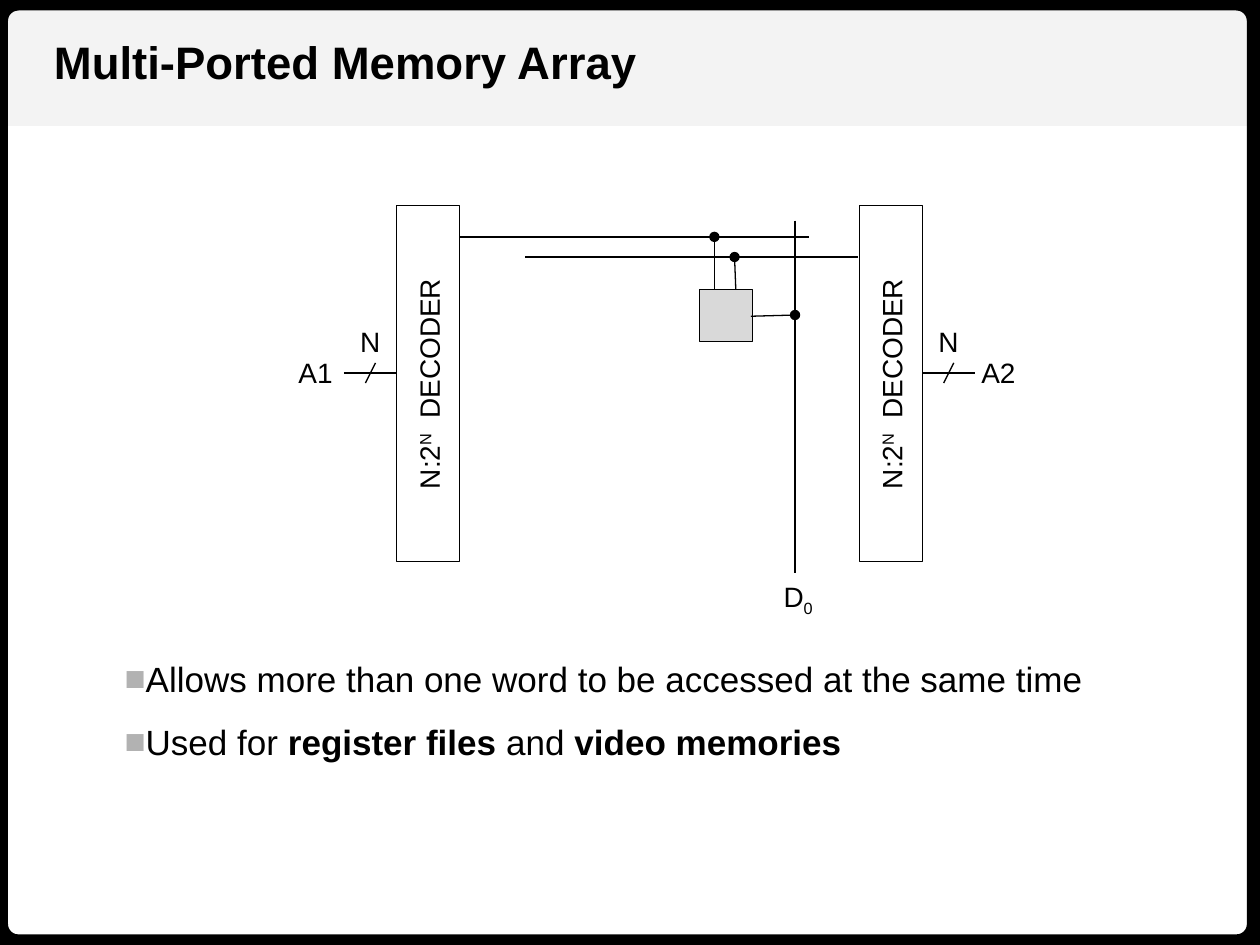
from dataclasses import dataclass

from lxml.etree import SubElement
from pptx import Presentation
from pptx.dml.color import RGBColor
from pptx.enum.shapes import MSO_CONNECTOR, MSO_SHAPE
from pptx.enum.text import MSO_AUTO_SIZE
from pptx.oxml.ns import qn
from pptx.util import Inches, Pt


@dataclass(frozen=True)
class Theme:
    font: str = "Arial"
    ink: str = "000000"
    band: str = "F3F3F3"
    cell: str = "D9D9D9"
    bullet: str = "B2B2B2"
    title_size: float = 26
    body_size: float = 20
    label_size: float = 16
    thin: float = 0.75
    border: float = 12


THEME = Theme()
WORD_LINE_1, WORD_LINE_2, ADDRESS_Y = 1.88, 2.04, 2.96
BIT_LINE_X = 6.31
DECODER_TOP, DECODER_WIDTH, DECODER_HEIGHT = 1.63, 0.5, 2.83


def rgb(value):
    return RGBColor.from_string(value)


def add_box(slide, box, kind=MSO_SHAPE.RECTANGLE, fill=None, line=THEME.thin):
    shape = slide.shapes.add_shape(kind, *map(Inches, box))
    shape.shadow.inherit = False
    if fill:
        shape.fill.solid()
        shape.fill.fore_color.rgb = rgb(fill)
    else:
        shape.fill.background()
    if line:
        shape.line.color.rgb = rgb(THEME.ink)
        shape.line.width = Pt(line)
    else:
        shape.line.fill.background()
    return shape


def add_wire(slide, start, end, dot=False):
    """Draw a thin line, with a junction dot at its end if asked."""
    wire = slide.shapes.add_connector(
        MSO_CONNECTOR.STRAIGHT, *map(Inches, (*start, *end)))
    wire.line.color.rgb = rgb(THEME.ink)
    wire.line.width = Pt(THEME.thin)
    if dot:
        SubElement(wire.line._get_or_add_ln(), qn("a:tailEnd"), type="oval")
    SubElement(wire._element.spPr, qn("a:effectLst"))


def add_bullet(paragraph, margin):
    properties = paragraph._p.get_or_add_pPr()
    properties.set("marL", str(Inches(margin)))
    properties.set("indent", "0")
    color = SubElement(properties, qn("a:buClr"))
    SubElement(color, qn("a:srgbClr"), val=THEME.bullet)
    SubElement(properties, qn("a:buFont"), typeface=THEME.font)
    SubElement(properties, qn("a:buChar"), char="■")


def add_text(slide, box, paragraphs, size=THEME.label_size, bold=False,
             wrap=False, rotation=0, spacing=None, bullet_margin=None):
    """Each paragraph is a list of strings or (string, format) pairs."""
    holder = slide.shapes.add_textbox(*map(Inches, box))
    holder.rotation = rotation
    frame = holder.text_frame
    frame.word_wrap = wrap
    frame.auto_size = MSO_AUTO_SIZE.SHAPE_TO_FIT_TEXT
    for index, pieces in enumerate(paragraphs):
        paragraph = frame.add_paragraph() if index else frame.paragraphs[0]
        if spacing:
            paragraph.line_spacing = spacing
        if bullet_margin is not None:
            add_bullet(paragraph, bullet_margin)
        for piece in pieces:
            words, style = (piece, {}) if isinstance(piece, str) else piece
            run = paragraph.add_run()
            run.text = words
            run.font.name = THEME.font
            run.font.size = Pt(size)
            run.font.bold = style.get("bold", bold)
            run.font.color.rgb = rgb(THEME.ink)
            if "baseline" in style:
                run._r.get_or_add_rPr().set("baseline", str(style["baseline"] * 1000))


def add_background(slide):
    add_box(slide, (0, 0, 10, 1), fill=THEME.band, line=None)
    border = add_box(slide, (-0.02, 0, 10, 7.5), MSO_SHAPE.ROUNDED_RECTANGLE,
                     line=THEME.border)
    border.adjustments[0] = 0.022


def add_decoder(slide, left):
    add_box(slide, (left, DECODER_TOP, DECODER_WIDTH, DECODER_HEIGHT))
    add_text(slide, (left - 0.69, 2.85, 1.89, 0.37),
             [["N:2", ("N", {"baseline": 30}), "  DECODER"]], rotation=270)


def add_address(slide, name, wire_left, name_left):
    """Draw an address bus with its width slash and labels."""
    add_wire(slide, (wire_left, ADDRESS_Y), (wire_left + 0.42, ADDRESS_Y))
    add_wire(slide, (wire_left + 0.17, ADDRESS_Y + 0.08),
             (wire_left + 0.25, ADDRESS_Y - 0.08))
    add_text(slide, (wire_left + 0.03, 2.53, 0.36, 0.37), [["N"]])
    add_text(slide, (name_left, 2.77, 0.48, 0.37), [[name]])


def add_memory_cell(slide):
    add_box(slide, (5.55, 2.3, 0.42, 0.41), fill=THEME.cell)
    add_wire(slide, (5.67, 2.3), (5.67, WORD_LINE_1), dot=True)
    add_wire(slide, (5.84, 2.3), (5.83, WORD_LINE_2), dot=True)
    add_wire(slide, (5.96, 2.51), (BIT_LINE_X, 2.5), dot=True)


def main():
    deck = Presentation()
    deck.slide_width, deck.slide_height = Inches(10), Inches(7.5)
    slide = deck.slides.add_slide(deck.slide_layouts[6])

    add_background(slide)
    add_text(slide, (0.33, 0.22, 4.87, 0.54), [["Multi-Ported Memory Array"]],
             size=THEME.title_size, bold=True)

    add_wire(slide, (BIT_LINE_X, 1.75), (BIT_LINE_X, 4.55))
    add_wire(slide, (3.65, WORD_LINE_1), (6.42, WORD_LINE_1))
    add_wire(slide, (4.17, WORD_LINE_2), (6.81, WORD_LINE_2))
    for decoder_left in (3.15, 6.82):
        add_decoder(slide, decoder_left)
    add_address(slide, "A1", wire_left=2.73, name_left=2.27)
    add_address(slide, "A2", wire_left=7.32, name_left=7.69)
    add_memory_cell(slide)
    add_text(slide, (6.12, 4.55, 0.45, 0.37), [["D", ("0", {"baseline": -25})]])

    strong = {"bold": True}
    add_text(slide, (0.28, 5, 9.39, 1.05), [
        ["Allows more than one word to be accessed at the same time"],
        ["Used for ", ("register files ", strong), "and ",
         ("video memories", strong)],
    ], size=THEME.body_size, wrap=True, spacing=1.5, bullet_margin=0.61)

    deck.save("out.pptx")


if __name__ == "__main__":
    main()
